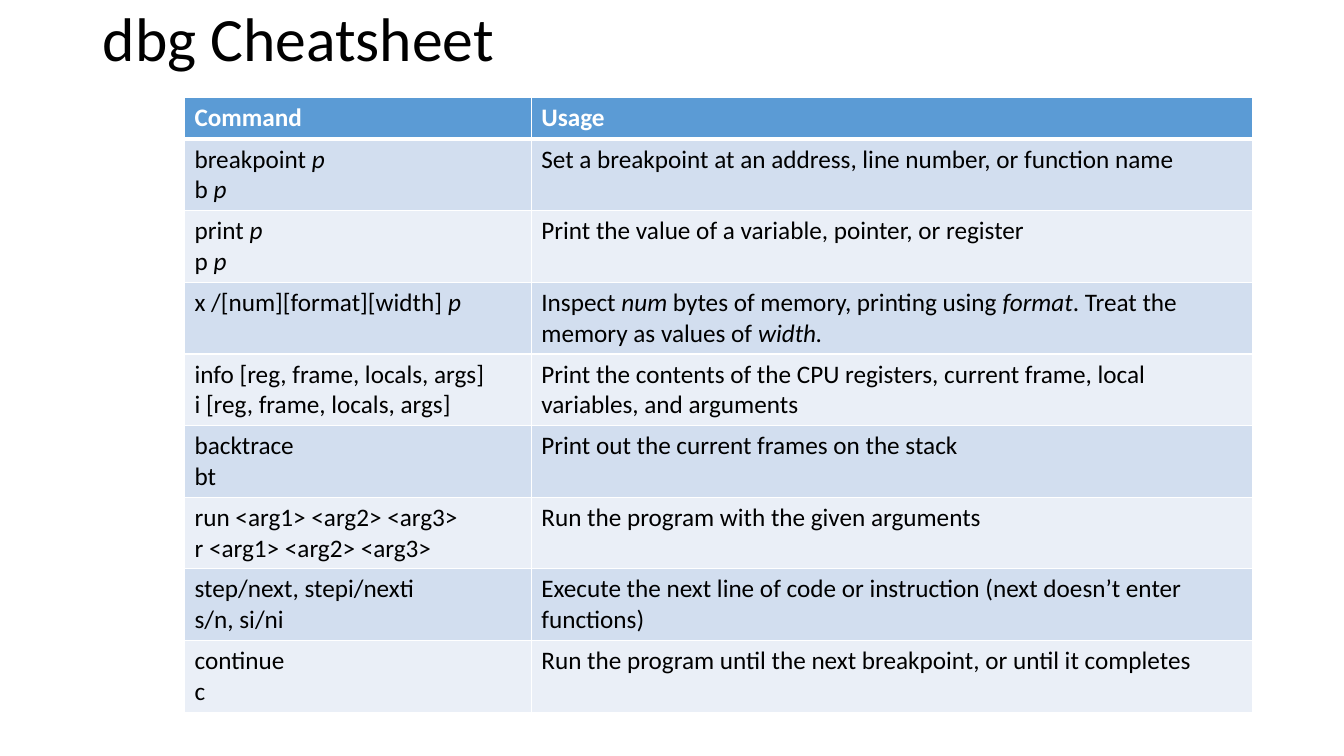
from dataclasses import dataclass

from lxml.etree import SubElement as Sub
from pptx import Presentation
from pptx.dml.color import RGBColor as RGB
from pptx.enum.text import MSO_ANCHOR as Anchor, PP_ALIGN as Align
from pptx.oxml.ns import qn
from pptx.util import Pt

PX = 9144  # EMU per px, 100 px to the inch


@dataclass(frozen=True)
class Theme:
    font: str = "Calibri"
    title: int = 44
    body: int = 18
    ink: str = "000000"
    white: str = "FFFFFF"
    head: str = "5B9BD5"
    bands: tuple = ("D2DEEF", "EAEFF7")
    thin: int = 1
    thick: int = 3


T = Theme()

# Lines of a cell are split by newlines; _text_ is italic
ROWS = [
    ("Command", "Usage"),
    ("breakpoint _p_\nb _p_",
     "Set a breakpoint at an address, line number, or function name"),
    ("print _p_\np _p_",
     "Print the value of a variable, pointer, or register"),
    ("x /[num][format][width] _p_",
     "Inspect _num_ bytes of memory, printing using _format_. "
     "Treat the memory as values of _width._"),
    ("info [reg, frame, locals, args]\ni [reg, frame, locals, args]",
     "Print the contents of the CPU registers, current frame, "
     "local variables, and arguments"),
    ("backtrace\nbt", "Print out the current frames on the stack"),
    ("run <arg1> <arg2> <arg3>\nr <arg1> <arg2> <arg3>",
     "Run the program with the given arguments"),
    ("step/next, stepi/nexti\ns/n, si/ni",
     "Execute the next line of code or instruction "
     "(next doesn’t enter functions)"),
    ("continue\nc",
     "Run the program until the next breakpoint, or until it completes"),
]


def px(*sizes):
    return [size * PX for size in sizes]


def add_run(para, text, size, color, bold=False, italic=False):
    run = para.add_run()
    run.text = text
    font = run.font
    font.name, font.size = T.font, Pt(size)
    font.bold, font.italic = bold, italic
    font.color.rgb = RGB.from_string(color)


def add_title(slide, text, box):
    title = slide.shapes.title
    title.left, title.top, title.width, title.height = px(*box)
    frame = title.text_frame
    frame.word_wrap = True
    frame.vertical_anchor = Anchor.MIDDLE
    para = frame.paragraphs[0]
    para.alignment, para.line_spacing = Align.LEFT, 0.9
    add_run(para, text, T.title, T.ink)


def set_edge(cell, side, width):
    props = cell._tc.get_or_add_tcPr()
    line = Sub(props, qn(f"a:ln{side}"), w=str(Pt(width)))
    fill = Sub(line, qn("a:solidFill"))
    Sub(fill, qn("a:srgbClr"), val=T.white)


def fill_cell(cell, text, row):
    head = row == 0
    # Edges come before the fill; a thick rule parts head and body
    wide = {(0, "B"), (1, "T")}
    for side in "LRTB":
        set_edge(cell, side, T.thick if (row, side) in wide else T.thin)
    cell.fill.solid()
    back = T.head if head else T.bands[(row - 1) % 2]
    cell.fill.fore_color.rgb = RGB.from_string(back)
    # Text, one paragraph a line
    frame = cell.text_frame
    for n, line in enumerate(text.split("\n")):
        para = frame.add_paragraph() if n else frame.paragraphs[0]
        for k, part in enumerate(line.split("_")):
            if part:
                add_run(para, part, T.body, T.white if head else T.ink,
                        bold=head, italic=k % 2 == 1)


def add_grid(slide, rows, left, top, cols, head, body):
    high = head + body * (len(rows) - 1)
    box = px(left, top, sum(cols), high)
    grid = slide.shapes.add_table(len(rows), len(cols), *box).table
    for col, width in zip(grid.columns, px(*cols)):
        col.width = width
    for r, texts in enumerate(rows):
        grid.rows[r].height = (body if r else head) * PX
        for c, text in enumerate(texts):
            fill_cell(grid.cell(r, c), text, r)


def main():
    deck = Presentation()
    deck.slide_width, deck.slide_height = px(1333, 750)
    slide = deck.slides.add_slide(deck.slide_layouts[5])
    add_title(slide, "dbg Cheatsheet", (92, 0, 1150, 82))
    add_grid(slide, ROWS, 183, 97, (344, 715), head=41, body=70)
    deck.save("out.pptx")


if __name__ == "__main__":
    main()
